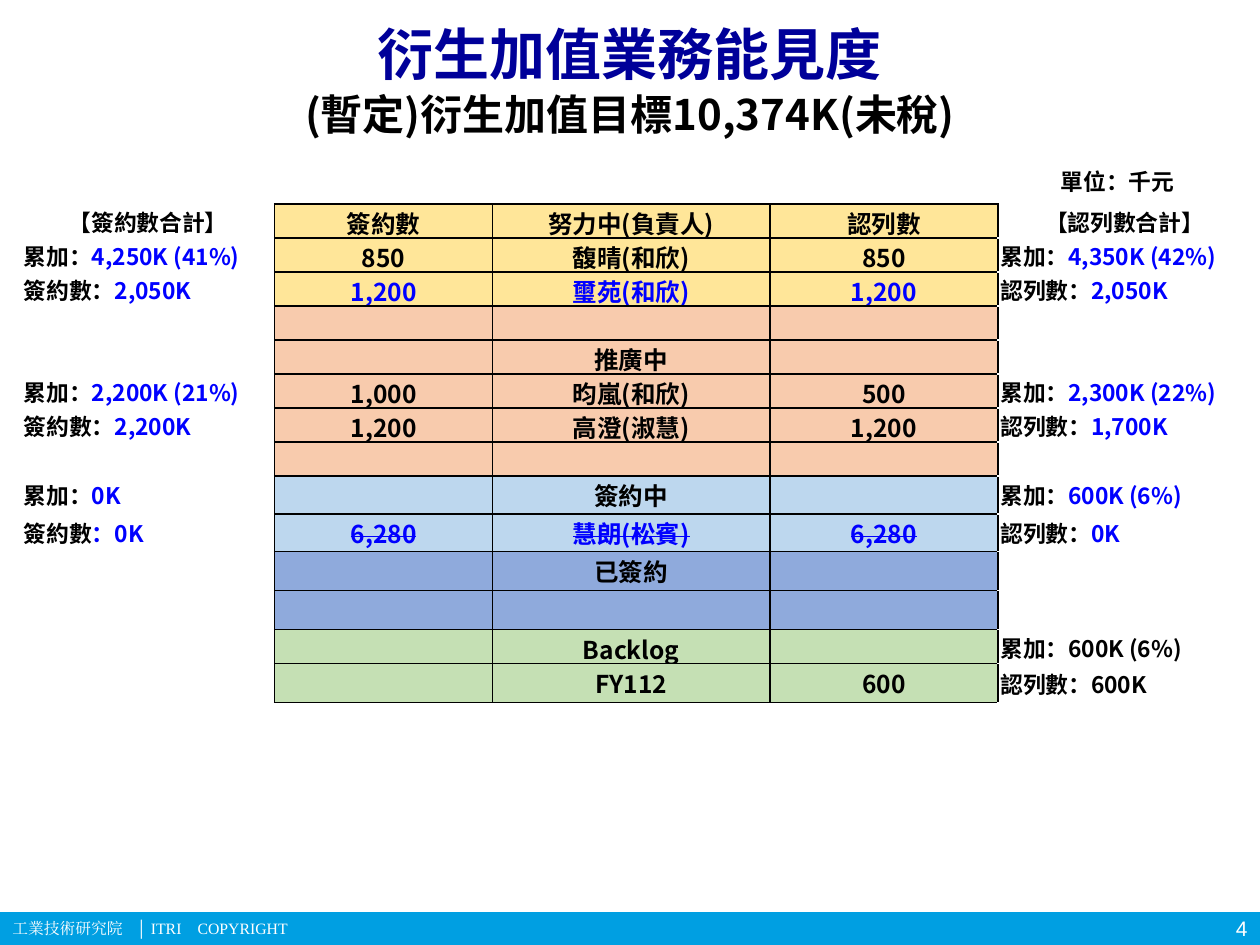
from dataclasses import dataclass

import pptx
import pptx.dml.color
import pptx.enum.shapes
import pptx.enum.text
import pptx.oxml
import pptx.oxml.ns
import pptx.presentation
import pptx.slide
import pptx.table
import pptx.text.text
import pptx.util
from lxml import etree

Inches = pptx.util.Inches
RGBColor = pptx.dml.color.RGBColor
Align = pptx.enum.text.PP_ALIGN
Anchor = pptx.enum.text.MSO_ANCHOR
qn = pptx.oxml.ns.qn

BLACK = RGBColor(0, 0, 0)
WHITE = RGBColor(255, 255, 255)
BLUE = RGBColor(0, 0, 255)
NAVY = RGBColor(0, 0, 0x99)
FOOTER_BLUE = RGBColor(0, 0x9F, 0xE2)
YELLOW = RGBColor(0xFF, 0xE6, 0x99)
ORANGE = RGBColor(0xF8, 0xCB, 0xAD)
PALE_BLUE = RGBColor(0xBD, 0xD7, 0xEE)
MID_BLUE = RGBColor(0x8F, 0xAA, 0xDC)
GREEN = RGBColor(0xC5, 0xE0, 0xB4)
SANS_SC = "Noto Sans CJK SC"
SANS_TC = "Noto Sans CJK TC"


@dataclass(frozen=True)
class Style:
    size: float
    color: RGBColor = BLACK
    font: str = SANS_SC
    bold: bool = True
    strike: bool = False


@dataclass(frozen=True)
class Side:
    """Summary beside the pipeline: a black label and a value."""
    label: str = ""
    value: str = ""
    color: RGBColor = BLUE


@dataclass(frozen=True)
class Row:
    height: float
    fill: RGBColor
    cells: tuple[str, str, str] = ("", "", "")
    left: Side = Side()
    right: Side = Side()
    color: RGBColor = BLACK
    strike: bool = False


COLUMN_WIDTHS = (2.01, 1.73, 2.2, 1.81, 2.01)
ROWS = (
    Row(0.27, YELLOW, ("簽約數", "努力中(負責人)", "認列數"),
        Side("【簽約數合計】"), Side("【認列數合計】")),
    Row(0.27, YELLOW, ("850", "馥晴(和欣)", "850"),
        Side("累加：", "4,250K\u00a0(41%)"), Side("累加：", "4,350K\u00a0(42%)")),
    Row(0.27, YELLOW, ("1,200", "璽苑(和欣)", "1,200"),
        Side("簽約數：", "2,050K"), Side("認列數：", "2,050K"), color=BLUE),
    Row(0.27, ORANGE),
    Row(0.27, ORANGE, ("", "推廣中", "")),
    Row(0.27, ORANGE, ("1,000", "昀嵐(和欣)", "500"),
        Side("累加：", "2,200K\u00a0(21%)"), Side("累加：", "2,300K\u00a0(22%)")),
    Row(0.27, ORANGE, ("1,200", "高澄(淑慧)", "1,200"),
        Side("簽約數：", "2,200K"), Side("認列數：", "1,700K")),
    Row(0.27, ORANGE),
    Row(0.3, PALE_BLUE, ("", "簽約中", ""),
        Side("累加：", "0K"), Side("累加：", "600K\u00a0(6%)")),
    Row(0.3, PALE_BLUE, ("6,280", "慧朗(松賓)", "6,280"),
        Side("簽約數", "：0K"), Side("認列數：", "0K"), color=BLUE, strike=True),
    Row(0.31, MID_BLUE, ("", "已簽約", "")),
    Row(0.31, MID_BLUE),
    Row(0.27, GREEN, ("", "Backlog", ""), right=Side("累加：", "600K (6%)", BLACK)),
    Row(0.31, GREEN, ("", "FY112", "600"), right=Side("認列數：", "600K", BLACK)),
)


def add_span(para: pptx.text.text._Paragraph, text: str, style: Style) -> None:
    span = para.add_run()
    span.text = text
    span.font.size = pptx.util.Pt(style.size)
    span.font.bold = style.bold
    span.font.color.rgb = style.color
    span.font.name = style.font
    properties = span.font._element
    etree.SubElement(properties, qn("a:ea")).set("typeface", style.font)
    if style.strike:
        properties.set("strike", "sngStrike")


def add_text(slide: pptx.slide.Slide, place: tuple[float, float, float, float],
             text: str, style: Style, align: Align = Align.LEFT,
             anchor: Anchor = Anchor.MIDDLE, tabs: tuple[float, ...] = ()) -> None:
    box = slide.shapes.add_textbox(*map(Inches, place))
    box.text_frame.word_wrap = True
    box.text_frame.vertical_anchor = anchor
    para = box.text_frame.paragraphs[0]
    para.alignment = align
    if tabs:
        stops = etree.SubElement(para._p.get_or_add_pPr(), qn("a:tabLst"))
        for position in tabs:
            stop = etree.SubElement(stops, qn("a:tab"))
            stop.set("pos", str(Inches(position)))
            stop.set("algn", "l")
    add_span(para, text, style)


def format_cell(cell: pptx.table._Cell, fill: RGBColor, edges: str) -> None:
    """Set margins, the black edges named by their letters, and the fill."""
    cell.vertical_anchor = Anchor.MIDDLE
    cell.margin_left = cell.margin_right = Inches(0.02)
    cell.margin_top = cell.margin_bottom = Inches(0.01)
    properties = cell._tc.get_or_add_tcPr()
    for edge in edges:
        line = etree.SubElement(properties, qn(f"a:ln{edge}"), w="12700")
        solid = etree.SubElement(line, qn("a:solidFill"))
        etree.SubElement(solid, qn("a:srgbClr"), val=str(BLACK))
    cell.fill.solid()
    cell.fill.fore_color.rgb = fill


def fill_cell(cell: pptx.table._Cell, spans: list[tuple[str, Style]],
              align: Align) -> None:
    para = cell.text_frame.paragraphs[0]
    para.alignment = align
    shown = [(text, style) for text, style in spans if text]
    for text, style in shown:
        add_span(para, text, style)
    if not shown:
        # An empty cell would otherwise stretch its row to the default size.
        etree.SubElement(para._p, qn("a:endParaRPr"), sz="1000")


def add_pipeline(slide: pptx.slide.Slide) -> None:
    frame = slide.shapes.add_table(
        len(ROWS), len(COLUMN_WIDTHS), Inches(0.17), Inches(1.62),
        Inches(sum(COLUMN_WIDTHS)), Inches(sum(row.height for row in ROWS)))
    table = frame.table
    table.first_row = table.horz_banding = False
    for column, width in zip(table.columns, COLUMN_WIDTHS):
        column.width = Inches(width)
    for index, row in enumerate(ROWS):
        table.rows[index].height = Inches(row.height)
        for column, side, edge in ((0, row.left, "R"), (4, row.right, "L")):
            cell = table.cell(index, column)
            format_cell(cell, WHITE, edge)
            fill_cell(cell, [(side.label, Style(13)),
                             (side.value, Style(13, side.color, SANS_TC))],
                      Align.CENTER if index == 0 else Align.LEFT)
        style = Style(14, row.color, strike=row.strike)
        for column, text in enumerate(row.cells, start=1):
            cell = table.cell(index, column)
            format_cell(cell, row.fill, "LRTB")
            fill_cell(cell, [(text, style)], Align.CENTER)


def add_footer(slide: pptx.slide.Slide) -> None:
    bar = slide.shapes.add_shape(
        pptx.enum.shapes.MSO_SHAPE.RECTANGLE,
        Inches(0), Inches(7.24), Inches(10), Inches(0.26))
    bar.shadow.inherit = False
    bar.fill.solid()
    bar.fill.fore_color.rgb = FOOTER_BLUE
    bar.line.fill.background()
    add_text(slide, (9.42, 7.24, 0.58, 0.26), "4",
             Style(12, WHITE, "Arial", bold=False), Align.RIGHT)
    add_text(slide, (0, 7.17, 8.94, 0.4), "工業技術研究院\t│ ITRI\tCOPYRIGHT",
             Style(9, WHITE, "Times New Roman", bold=False), tabs=(0.98, 1.47))


def main() -> None:
    deck = pptx.Presentation()
    deck.slide_width, deck.slide_height = Inches(10), Inches(7.5)
    slide = deck.slides.add_slide(deck.slide_layouts[6])
    add_footer(slide)
    add_pipeline(slide)
    add_text(slide, (0, 0.13, 10, 0.58), "衍生加值業務能見度", Style(32, NAVY), Align.CENTER)
    add_text(slide, (0, 0.65, 10, 0.5), "(暫定)衍生加值目標10,374K(未稅)",
             Style(24), Align.CENTER, Anchor.TOP)
    add_text(slide, (8.32, 1.28, 1.61, 0.32), "單位：千元",
             Style(13, font=SANS_TC), anchor=Anchor.TOP)
    deck.save("out.pptx")


if __name__ == "__main__":
    main()
